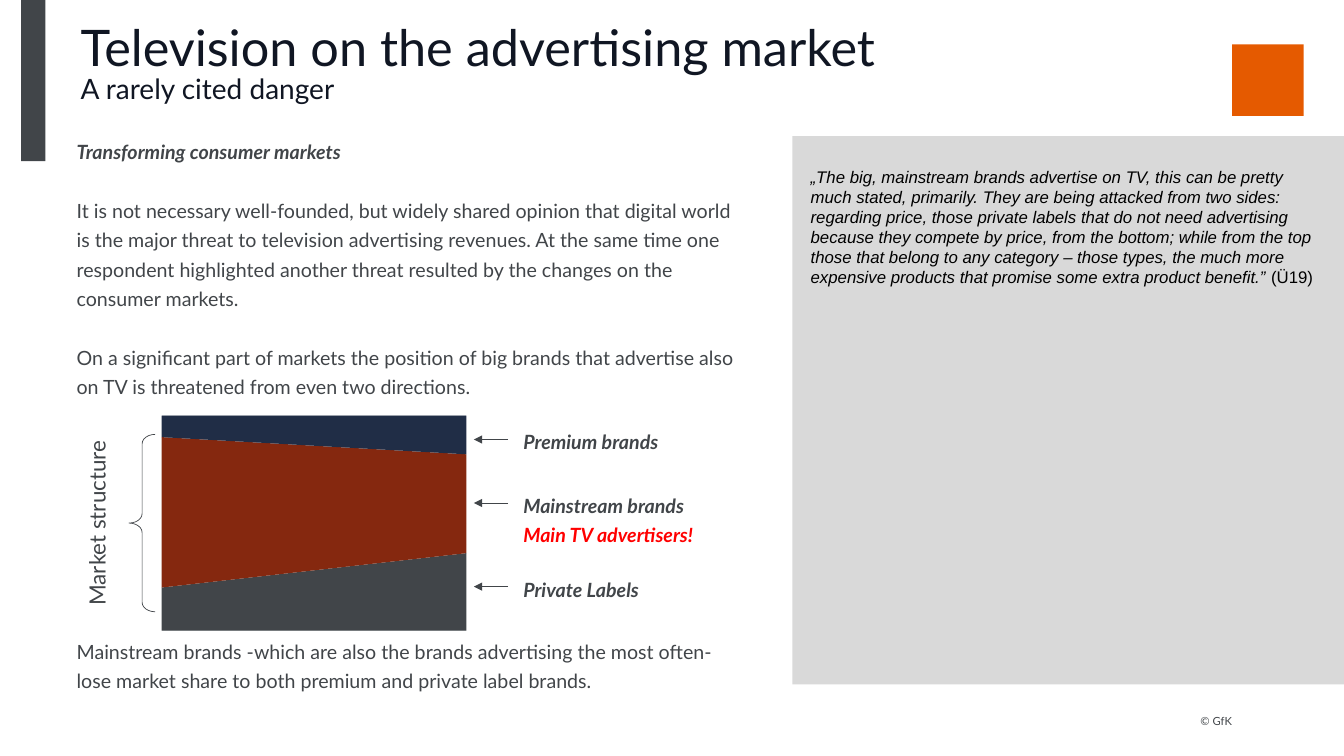
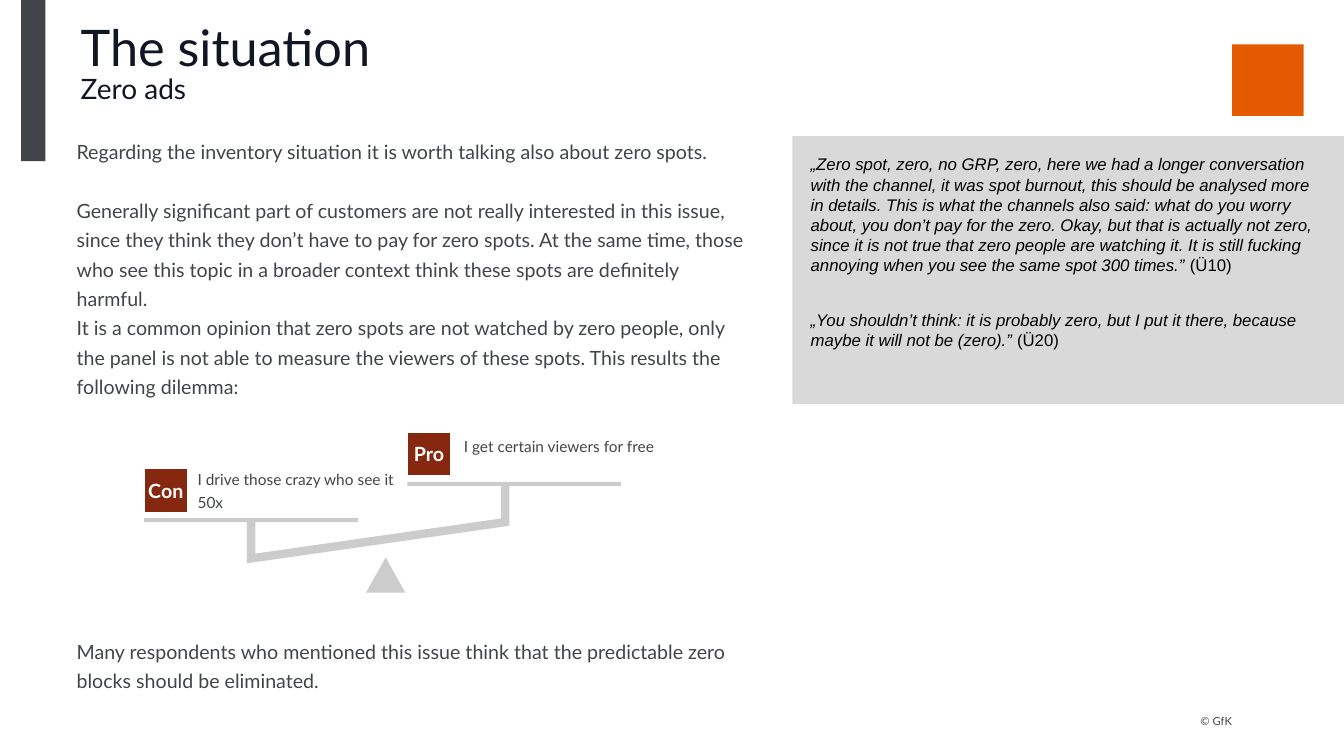
from dataclasses import dataclass
from typing import NamedTuple

from lxml.etree import SubElement
from pptx import Presentation
from pptx.chart.data import CategoryChartData
from pptx.dml.color import RGBColor
from pptx.enum.chart import XL_CHART_TYPE as ChartType
from pptx.enum.shapes import MSO_CONNECTOR as Connector
from pptx.enum.shapes import MSO_SHAPE as Shape
from pptx.enum.text import MSO_ANCHOR as Anchor
from pptx.enum.text import MSO_AUTO_SIZE as AutoSize
from pptx.enum.text import PP_ALIGN as Align
from pptx.oxml.ns import qn
from pptx.util import Inches, Pt

COLORS = {
    "slate": "414549",
    "title": "101623",
    "orange": "E55A00",
    "panel": "D9D9D9",
    "rust": "85280F",
    "navy": "202D46",
    "grid": "E1E3E5",
    "scale": "CCCCCC",
    "red": "FF0000",
    "white": "FFFFFF",
    "black": "000000",
}
HEADING_FONT = "Lato"
QUOTE_FONT = "Arial"
BODY_SPACING = 1.25
BODY_GAP = 21
PANEL_LEFT, PANEL_TOP, PANEL_WIDTH = 7.86, 1.35, 5.47


class Box(NamedTuple):
    left: float
    top: float
    width: float
    height: float

    def lengths(self) -> tuple:
        return tuple(Inches(value) for value in self)


@dataclass(frozen=True)
class Style:
    size: float = 14
    color: str = "slate"
    font: str = HEADING_FONT
    bold: bool = False
    italic: bool = False
    align: Align = Align.LEFT
    spacing: float = BODY_SPACING


@dataclass(frozen=True)
class Line:
    text: str
    style: Style = Style()
    gap_after: float = 0


@dataclass(frozen=True)
class Quote:
    top: float
    text: str
    respondent: str


@dataclass(frozen=True)
class Band:
    arrow_y: float
    lines: tuple


@dataclass(frozen=True)
class Pan:
    left: float
    top: float
    name: str
    argument: str
    argument_box: Box


EMPHASIS = Style(bold=True, italic=True)
ALERT = Style(bold=True, italic=True, color="red")
TITLE = Style(size=36, color="title", spacing=0.85)
SUBTITLE = Style(size=20, color="title", spacing=0.85)
FOOTER = Style(size=8, align=Align.RIGHT)
AXIS_LABEL = Style(size=16, align=Align.CENTER)
BADGE = Style(color="white", bold=True, align=Align.CENTER, spacing=1)
ARGUMENT = Style(size=11)
QUOTE = Style(size=12, color="black", font=QUOTE_FONT, spacing=1)

BANDS = (
    Band(4.36, (Line("Premium brands", EMPHASIS),)),
    Band(4.99, (Line("Mainstream brands", EMPHASIS), Line("Main TV advertisers!", ALERT))),
    Band(5.82, (Line("Private Labels", EMPHASIS),)),
)
MARKET_SHARES = (
    ("Series 1", (20, 24, 28, 32, 36), "slate"),
    ("Series 2", (70, 64, 58, 52, 46), "rust"),
    ("Series 3", (10, 12, 14, 16, 18), "navy"),
)
PANS = (
    Pan(1.43, 5.14, "Con", "I drive those crazy who see it 50x", Box(1.96, 4.62, 1.95, 0.43)),
    Pan(4.04, 4.78, "Pro", "I get certain viewers for free", Box(4.6, 4.29, 2.12, 0.43)),
)


def rgb(name: str) -> RGBColor:
    return RGBColor.from_string(COLORS[name])


def style_paragraph(paragraph, style: Style) -> None:
    paragraph.alignment = style.align
    paragraph.line_spacing = style.spacing
    font = paragraph.font
    font.name, font.size = style.font, Pt(style.size)
    font.bold, font.italic = style.bold, style.italic
    font.color.rgb = rgb(style.color)


def write_lines(frame, lines, anchor=Anchor.TOP, side_inset: float = 0, wrap: bool = True) -> None:
    frame.auto_size = AutoSize.NONE
    frame.word_wrap = wrap
    frame.vertical_anchor = anchor
    frame.margin_left = frame.margin_right = Inches(side_inset)
    frame.margin_top = frame.margin_bottom = 0
    for index, line in enumerate(lines):
        paragraph = frame.add_paragraph() if index else frame.paragraphs[0]
        paragraph.text = line.text
        if line.gap_after:
            paragraph.space_after = Pt(line.gap_after)
        style_paragraph(paragraph, line.style)


def add_text(slide, box: Box, *lines: Line, anchor=Anchor.TOP):
    shape = slide.shapes.add_textbox(*box.lengths())
    write_lines(shape.text_frame, lines, anchor)
    return shape


def add_filled(slide, box: Box, color: str, kind=Shape.RECTANGLE):
    shape = slide.shapes.add_shape(kind, *box.lengths())
    shape.shadow.inherit = False
    shape.fill.solid()
    shape.fill.fore_color.rgb = rgb(color)
    shape.line.fill.background()
    return shape


def outline(shape, color: str, width: float) -> None:
    shape.line.color.rgb = rgb(color)
    shape.line.width = Pt(width)


def add_arrow(slide, start_x: float, end_x: float, y: float) -> None:
    arrow = slide.shapes.add_connector(
        Connector.STRAIGHT, Inches(start_x), Inches(y), Inches(end_x), Inches(y)
    )
    outline(arrow, "slate", 0.5)
    properties = arrow._element.spPr
    SubElement(properties.find(qn("a:ln")), qn("a:tailEnd"), type="triangle")
    SubElement(properties, qn("a:effectLst"))


def add_quote(slide, quote: Quote) -> None:
    box = Box(8.04, quote.top, 5.12, 0.76)
    frame = slide.shapes.add_textbox(*box.lengths()).text_frame
    frame.word_wrap = True
    frame.margin_left = frame.margin_right = frame.margin_bottom = 0
    frame.margin_top = Inches(0.08)
    paragraph = frame.paragraphs[0]
    style_paragraph(paragraph, QUOTE)
    for text, italic in ((quote.text + " ", True), (quote.respondent, False)):
        run = paragraph.add_run()
        run.text = text
        run.font.italic = italic


def add_base_slide(presentation, title: str, subtitle: str, body, conclusion: str,
                   panel_height: float, quotes):
    slide = presentation.slides.add_slide(presentation.slide_layouts[5])
    heading = slide.shapes.title
    heading.left, heading.top, heading.width, heading.height = Box(0.8, 0.25, 8.45, 0.54).lengths()
    write_lines(heading.text_frame, (Line(title, TITLE), Line(subtitle, SUBTITLE)))
    add_filled(slide, Box(0.21, 0, 0.24, 1.6), "slate")
    add_filled(slide, Box(12.22, 0.44, 0.71, 0.71), "orange")
    add_text(slide, Box(11.67, 7.07, 0.55, 0.15), Line("© GfK", FOOTER), anchor=Anchor.BOTTOM)
    add_text(slide, Box(0.76, 1.33, 6.66, 2.76), *body)
    add_text(slide, Box(0.76, 6.29, 6.66, 0.58), Line(conclusion))
    add_filled(slide, Box(PANEL_LEFT, PANEL_TOP, PANEL_WIDTH, panel_height), "panel")
    for quote in quotes:
        add_quote(slide, quote)
    return slide


def add_market_chart(slide) -> None:
    data = CategoryChartData()
    data.categories = [str(number) for number in range(1, 6)]
    for name, values, _ in MARKET_SHARES:
        data.add_series(name, values)
    box = Box(1.54, 4.08, 3.15, 2.22)
    chart = slide.shapes.add_chart(ChartType.AREA_STACKED_100, *box.lengths(), data).chart
    chart.has_legend = False
    chart.has_title = False
    chart.font.name, chart.font.size = HEADING_FONT, Pt(10)
    chart.font.color.rgb = rgb("slate")
    plot = chart.plots[0]
    plot.vary_by_categories = False
    for series, (_, _, color) in zip(plot.series, MARKET_SHARES):
        series.format.fill.solid()
        series.format.fill.fore_color.rgb = rgb(color)
    chart.category_axis.visible = False
    chart.value_axis.visible = False
    chart.value_axis.has_major_gridlines = True
    grid = chart.value_axis.major_gridlines.format.line
    grid.color.rgb = rgb("grid")
    grid.width = Pt(0.75)


def build_market_slide(presentation) -> None:
    slide = add_base_slide(
        presentation,
        "Television on the advertising market",
        "A rarely cited danger",
        (
            Line("Transforming consumer markets", EMPHASIS, BODY_GAP),
            Line("It is not necessary well-founded, but widely shared opinion that digital world is the major threat to television advertising revenues. At the same time one respondent highlighted another threat resulted by the changes on the consumer markets.", gap_after=BODY_GAP),
            Line("On a significant part of markets the position of big brands that advertise also on TV is threatened from even two directions."),
        ),
        "Mainstream brands -which are also the brands advertising the most often- lose market share to both premium and private label brands.",
        5.44,
        (Quote(1.57, "„The big, mainstream brands advertise on TV, this can be pretty much stated, primarily. They are being attacked from two sides: regarding price, those private labels that do not need advertising because they compete by price, from the bottom; while from the top those that belong to any category – those types, the much more expensive products that promise some extra product benefit.”", "(Ü19)"),),
    )
    add_market_chart(slide)
    for band in BANDS:
        add_arrow(slide, 5.04, 4.7, band.arrow_y)
        add_text(slide, Box(5.19, band.arrow_y - 0.15, 1.92, 0.31), *band.lines)
    brace = slide.shapes.add_shape(Shape.LEFT_BRACE, *Box(1.28, 4.31, 0.26, 1.76).lengths())
    brace.shadow.inherit = False
    brace.adjustments[0] = 0.36
    brace.fill.background()
    outline(brace, "slate", 0.5)
    axis_label = add_text(slide, Box(0.07, 4.95, 1.86, 0.48), Line("Market structure", AXIS_LABEL))
    axis_label.rotation = 270


def add_beam(slide) -> None:
    points = [(Inches(x), Inches(y)) for x, y in ((2.49, 5.18), (2.49, 5.54), (5.01, 5.18), (5.01, 4.82))]
    builder = slide.shapes.build_freeform(*points[0])
    builder.add_line_segments(points[1:], close=False)
    beam = builder.convert_to_shape()
    beam.shadow.inherit = False
    beam.fill.background()
    outline(beam, "scale", 6)
    SubElement(beam._element.spPr.find(qn("a:ln")), qn("a:miter"), lim="800000")


def build_situation_slide(presentation) -> None:
    slide = add_base_slide(
        presentation,
        "The situation",
        "Zero ads",
        (
            Line("Regarding the inventory situation it is worth talking also about zero spots.", gap_after=BODY_GAP),
            Line("Generally significant part of customers are not really interested in this issue, since they think they don’t have to pay for zero spots. At the same time, those who see this topic in a broader context think these spots are definitely harmful."),
            Line("It is a common opinion that zero spots are not watched by zero people, only the panel is not able to measure the viewers of these spots. This results the following dilemma:"),
        ),
        "Many respondents who mentioned this issue think that the predictable zero blocks should be eliminated.",
        2.66,
        (
            Quote(1.45, "„Zero spot, zero, no GRP, zero, here we had a longer conversation with the channel, it was spot burnout, this should be analysed more in details. This is what the channels also said: what do you worry about, you don’t pay for the zero. Okay, but that is actually not zero, since it is not true that zero people are watching it. It is still fucking annoying when you see the same spot 300 times.”", "(Ü10)"),
            Quote(2.99, "„You shouldn’t think: it is probably zero, but I put it there, because maybe it will not be (zero).”", "(Ü20)"),
        ),
    )
    add_beam(slide)
    add_filled(slide, Box(3.63, 5.53, 0.39, 0.35), "scale", Shape.ISOSCELES_TRIANGLE)
    for pan in PANS:
        add_filled(slide, Box(pan.left, pan.top, 2.12, 0.04), "scale")
        badge = add_filled(slide, Box(pan.left, pan.top - 0.49, 0.43, 0.43), "rust")
        outline(badge, "white", 0.5)
        write_lines(badge.text_frame, (Line(pan.name, BADGE),), Anchor.MIDDLE, 0.1, wrap=False)
        add_text(slide, pan.argument_box, Line(pan.argument, ARGUMENT))


def main() -> None:
    presentation = Presentation()
    presentation.slide_width = Inches(13.33)
    presentation.slide_height = Inches(7.5)
    build_market_slide(presentation)
    build_situation_slide(presentation)
    presentation.save("out.pptx")


if __name__ == "__main__":
    main()
